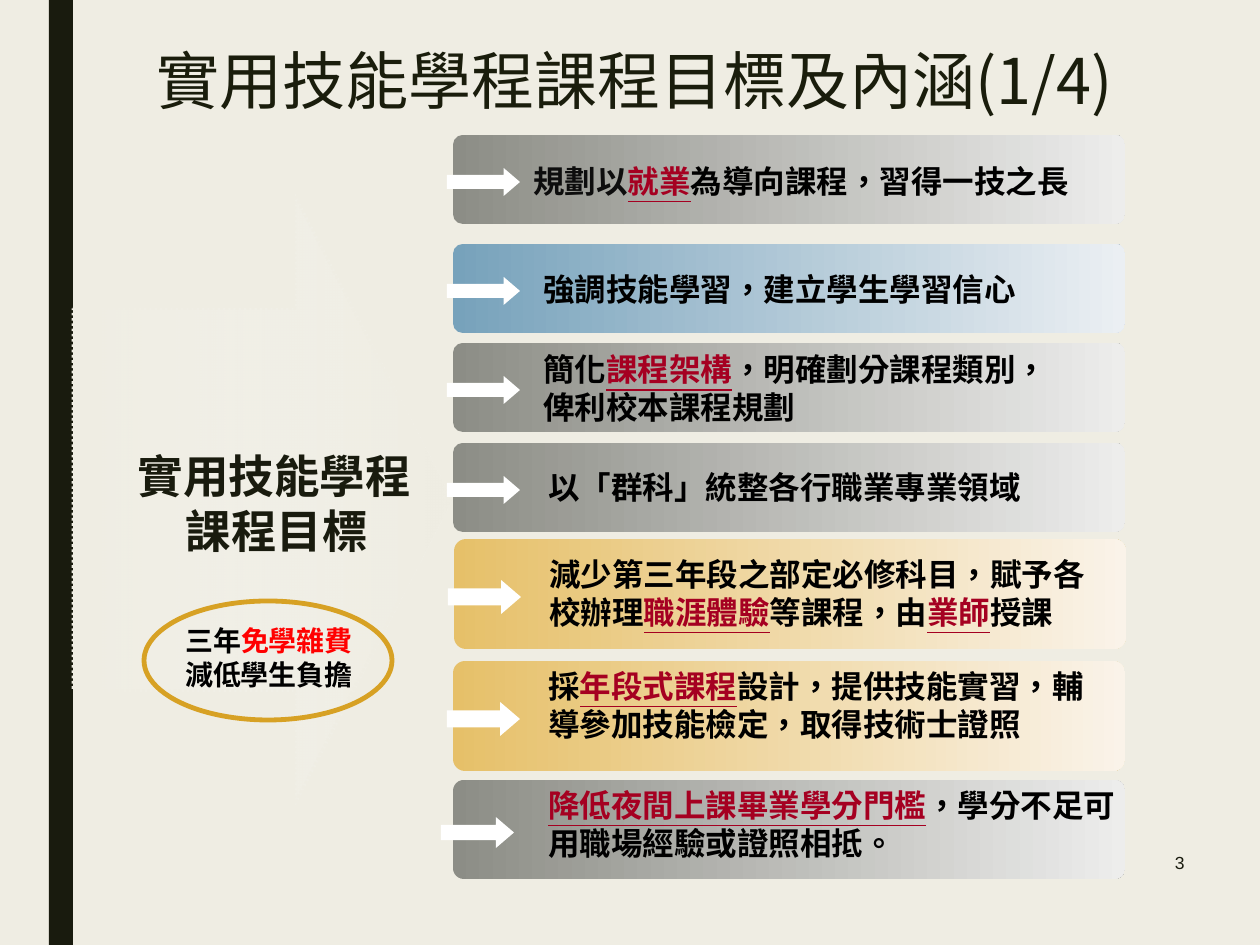
from lxml import etree
from pptx import Presentation
from pptx.dml.color import RGBColor
from pptx.enum.dml import MSO_LINE
from pptx.enum.shapes import MSO_SHAPE
from pptx.enum.text import MSO_ANCHOR, PP_ALIGN
from pptx.oxml.ns import qn
from pptx.util import Emu, Pt

RECT, ROUNDED = MSO_SHAPE.RECTANGLE, MSO_SHAPE.ROUNDED_RECTANGLE
ARROW, OVAL = MSO_SHAPE.RIGHT_ARROW, MSO_SHAPE.OVAL
TOP, MIDDLE = MSO_ANCHOR.TOP, MSO_ANCHOR.MIDDLE
LEFT, CENTER, RIGHT = PP_ALIGN.LEFT, PP_ALIGN.CENTER, PP_ALIGN.RIGHT
DOTTED = MSO_LINE.ROUND_DOT

PX_PER_INCH = 126
PAPER, INK, BLACK, WHITE = "EFEDE3", "191B0E", "000000", "FFFFFF"
CRIMSON, RED, OCHRE = "A50021", "FF0000", "D7A124"
GRAY = ("8C8D86", "EDEDEC")
BLUE = ("77A2BB", "EBEFF3")
GOLD = ("E6C069", "FAF3E9")
SANS, LATO = "Noto Sans CJK SC", "Lato"


def px(length):
    return Emu(round(length * 914400 / PX_PER_INCH))


def rgb(value):
    return RGBColor.from_string(value)


def key(text):
    """A highlighted term inside a goal."""
    return text, {"color": CRIMSON, "underline": True}


class SlideBuilder:
    """Holds the style and the current slide."""

    def __init__(self, deck):
        self.slide = deck.slides.add_slide(deck.slide_layouts[6])
        background = self.slide.background.fill
        background.solid()
        background.fore_color.rgb = rgb(PAPER)

    def shape(self, kind, bounds, fill=None, line=None, adjust=(), alphas=()):
        """fill: hex string, pair of gradient ends or None; line: (color, points, dash)."""
        shape = self.slide.shapes.add_shape(kind, *map(px, bounds))
        shape.shadow.inherit = False
        for index, value in enumerate(adjust):
            shape.adjustments[index] = value
        if fill is None:
            shape.fill.background()
        elif isinstance(fill, str):
            shape.fill.solid()
            shape.fill.fore_color.rgb = rgb(fill)
        else:
            shape.fill.gradient()
            shape.fill.gradient_angle = 0
            for stop, position, color in zip(shape.fill.gradient_stops, (0, 1), fill):
                stop.position = position
                stop.color.rgb = rgb(color)
            colors = shape._element.spPr.findall(".//" + qn("a:srgbClr"))
            for color, alpha in zip(colors, alphas):
                etree.SubElement(color, qn("a:alpha"), val=str(alpha * 1000))
        if line is None:
            shape.line.fill.background()
        else:
            color, width, dash = line
            shape.line.color.rgb = rgb(color)
            shape.line.width = Pt(width)
            if dash:
                shape.line.dash_style = dash
        return shape

    def text(self, bounds, paras, anchor=TOP):
        """paras: list of (spans, paragraph format, base font format)."""
        box = self.slide.shapes.add_textbox(*map(px, bounds))
        frame = box.text_frame
        frame.word_wrap = True
        frame.vertical_anchor = anchor
        for index, (spans, layout, base) in enumerate(paras):
            para = frame.add_paragraph() if index else frame.paragraphs[0]
            layout = dict(layout)
            hanging = layout.pop("hanging", 0)
            if hanging:
                properties = para._p.get_or_add_pPr()
                properties.set("marL", str(px(hanging)))
                properties.set("indent", str(-px(hanging)))
            for name, value in layout.items():
                setattr(para, name, value)
            for span in spans:
                words, extra = (span, {}) if isinstance(span, str) else span
                self.span(para, words, {**base, **extra})
        return box

    def span(self, para, words, style):
        style = dict(style)
        color = style.pop("color", BLACK)
        run = para.add_run()
        run.text = words
        for name, value in style.items():
            setattr(run.font, name, value)
        run.font.color.rgb = rgb(color)
        properties = run._r.get_or_add_rPr()
        properties.set("lang", "zh-TW")
        latin = properties.find(qn("a:latin"))
        latin.addnext(etree.Element(qn("a:ea"), typeface=LATO))

    def text_shadow(self, box, color):
        """Give every run of the box a small hard shadow."""
        for run in box.text_frame.paragraphs[0].runs:
            effects = etree.Element(qn("a:effectLst"))
            shadow = etree.SubElement(effects, qn("a:outerShdw"),
                                      dist="38100", dir="2700000", algn="tl")
            etree.SubElement(shadow, qn("a:srgbClr"), val=color)
            run._r.get_or_add_rPr().find(qn("a:solidFill")).addnext(effects)

    def goal(self, left, top, height, colors, text_bounds, spans, arrow_gap=6):
        """One goal bar with its white arrow and its wording."""
        self.shape(ROUNDED, (left, top, 672, height), colors, adjust=(0.109,))
        arrow_height = round(height * 0.31)
        arrow_top = top + (height - arrow_height) // 2 + 3
        self.shape(ARROW, (left - arrow_gap, arrow_top, 73, arrow_height), WHITE,
                   adjust=(0.5, 0.583))
        base = {"size": Pt(18), "bold": True, "name": SANS}
        self.text(text_bounds, [(spans, {"alignment": LEFT}, base)])


def main():
    deck = Presentation()
    deck.slide_width, deck.slide_height = px(1260), px(945)
    page = SlideBuilder(deck)

    # Side band and page number
    page.shape(RECT, (49, 0, 24, 945), INK)
    page.text((903, 830, 294, 66),
              [(["3"], {"alignment": RIGHT}, {"size": Pt(10), "name": "Arial", "color": INK})],
              MIDDLE)

    # Faint arrow leading from the programme to its goals
    faint_line = (PAPER, 1.5, DOTTED)
    page.shape(ARROW, (73, 195, 378, 609), (WHITE, PAPER), faint_line,
               (0.628, 0.413), alphas=(0, 50))
    page.shape(ROUNDED, (444, 115, 707, 774), line=faint_line, adjust=(0.035,))

    # Programme name and fee note
    centered = {"alignment": CENTER, "hanging": 16}
    heading = {"size": Pt(26), "bold": True, "name": SANS, "color": INK}
    note = {"size": Pt(16), "bold": True, "name": LATO}
    page.text((105, 442, 328, 314), [
        ([" 實用技能學程課程目標"], centered, heading),
        (["三年", ("免學雜費", {"color": RED})], {**centered, "space_before": Pt(38)}, note),
        (["減低學生負擔"], centered, note),
    ])
    page.shape(OVAL, (144, 601, 248, 119), line=(OCHRE, 2.75, None))

    # Goals: left, top, height, colors, text bounds, spans
    goals = [
        (453, 135, 89, GRAY, (521, 156, 581, 50),
         [("規劃以", {"color": "0D0D0D"}), key("就業"), "為導向課程，習得一技之長"]),
        (453, 244, 89, BLUE, (531, 264, 556, 50),
         ["強調技能學習，建立學生學習信心"]),
        (453, 343, 89, GRAY, (531, 344, 556, 89),
         ["簡化", key("課程架構"), "，明確劃分課程類別，俾利校本課程規劃"]),
        (453, 443, 89, GRAY, (536, 462, 556, 50),
         ["以「群科」統整各行職業專業領域"]),
        (454, 539, 110, GOLD, (537, 549, 566, 89),
         ["減少第三年段之部定必修科目，賦予各校辦理", key("職涯體驗"),
          "等課程，由", key("業師"), "授課"]),
        (453, 661, 110, GOLD, (536, 661, 566, 89),
         ["採", key("年段式課程"), "設計，提供技能實習，輔導參加技能檢定，取得技術士證照"]),
        (453, 780, 99, GRAY, (536, 780, 605, 89),
         [key("降低夜間上課畢業學分門檻"), "，學分不足可用職場經驗或證照相抵。"], 12),
    ]
    for goal in goals:
        page.goal(*goal)

    # Title
    title = page.text((144, 16, 1116, 127),
                      [(["實用技能學程課程目標及內涵(1/4)"], {"alignment": LEFT},
                        {"size": Pt(36), "name": SANS, "color": "1A1D0C"})], MIDDLE)
    page.text_shadow(title, WHITE)

    deck.save("out.pptx")


if __name__ == "__main__":
    main()
